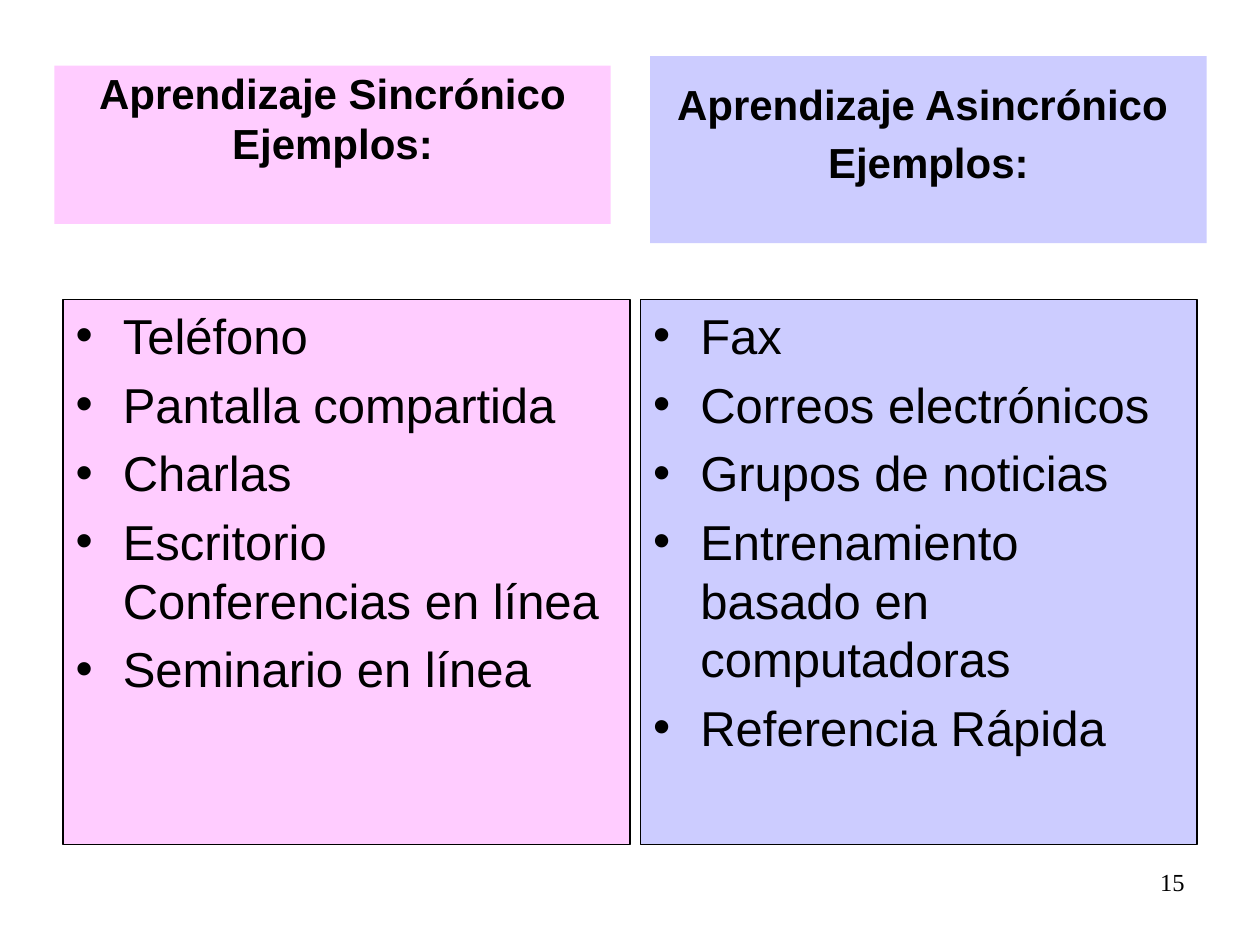
from pptx import Presentation
from pptx.dml.color import RGBColor
from pptx.enum.text import MSO_ANCHOR, MSO_AUTO_SIZE, PP_ALIGN
from pptx.util import Pt

PINK, BLUE, BLACK = "FFCCFF", "CCCCFF", "000000"


def tint(part, code):
    part.rgb = RGBColor.from_string(code)


def place(shape, box):
    shape.left, shape.top, shape.width, shape.height = map(Pt, box)


def paint(shape, code):
    shape.fill.solid()
    tint(shape.fill.fore_color, code)


def write(para, text, size, face="Arial", bold=False):
    run = para.add_run()
    run.text = text
    font = run.font
    font.size, font.name, font.bold = Pt(size), face, bold
    tint(font.color, BLACK)


def fill_text(shape, lines, size, bold=False, align=None):
    frame = shape.text_frame
    frame.word_wrap = True
    frame.auto_size = MSO_AUTO_SIZE.NONE
    for i, line in enumerate(lines):
        para = frame.add_paragraph() if i else frame.paragraphs[0]
        para.alignment = align
        para.space_before = Pt(size * 0.2)
        para.line_spacing = Pt(size * 1.2)
        write(para, line, size, bold=bold)


def add_head(shape, box, code, lines):
    place(shape, box)
    paint(shape, code)
    fill_text(shape, lines, 24, True, PP_ALIGN.CENTER)
    frame = shape.text_frame
    frame.vertical_anchor = MSO_ANCHOR.BOTTOM
    frame.margin_bottom = Pt(32)


def add_list(shape, box, code, items):
    place(shape, box)
    paint(shape, code)
    tint(shape.line.color, BLACK)
    shape.line.width = Pt(0.75)
    fill_text(shape, items, 28)


def add_number(slide, box, text):
    frame = slide.shapes.add_textbox(*map(Pt, box)).text_frame
    frame.word_wrap = True
    para = frame.paragraphs[0]
    para.alignment = PP_ALIGN.RIGHT
    write(para, text, 14, "Times New Roman")


def main():
    deck = Presentation()
    deck.slide_width, deck.slide_height = Pt(720), Pt(540)
    slide = deck.slides.add_slide(deck.slide_layouts[4])
    title, *slots = slide.placeholders
    title.element.getparent().remove(title.element)
    head_a, list_a, head_b, list_b = slots

    add_head(head_a, (31, 37.5, 318, 90.5), PINK,
             ["Aprendizaje Sincrónico Ejemplos:"])
    add_list(list_a, (36, 171, 324, 311.5), PINK,
             ["Teléfono", "Pantalla compartida", "Charlas",
              "Escritorio Conferencias en línea", "Seminario en línea"])
    add_head(head_b, (371.5, 32, 318, 107), BLUE,
             ["Aprendizaje Asincrónico ", "Ejemplos:"])
    add_list(list_b, (366, 171, 318, 311.5), BLUE,
             ["Fax", "Correos electrónicos", "Grupos de noticias",
              "Entrenamiento basado en computadoras", "Referencia Rápida"])
    add_number(slide, (516, 492, 168, 37.5), "15")
    deck.save("out.pptx")


if __name__ == "__main__":
    main()
